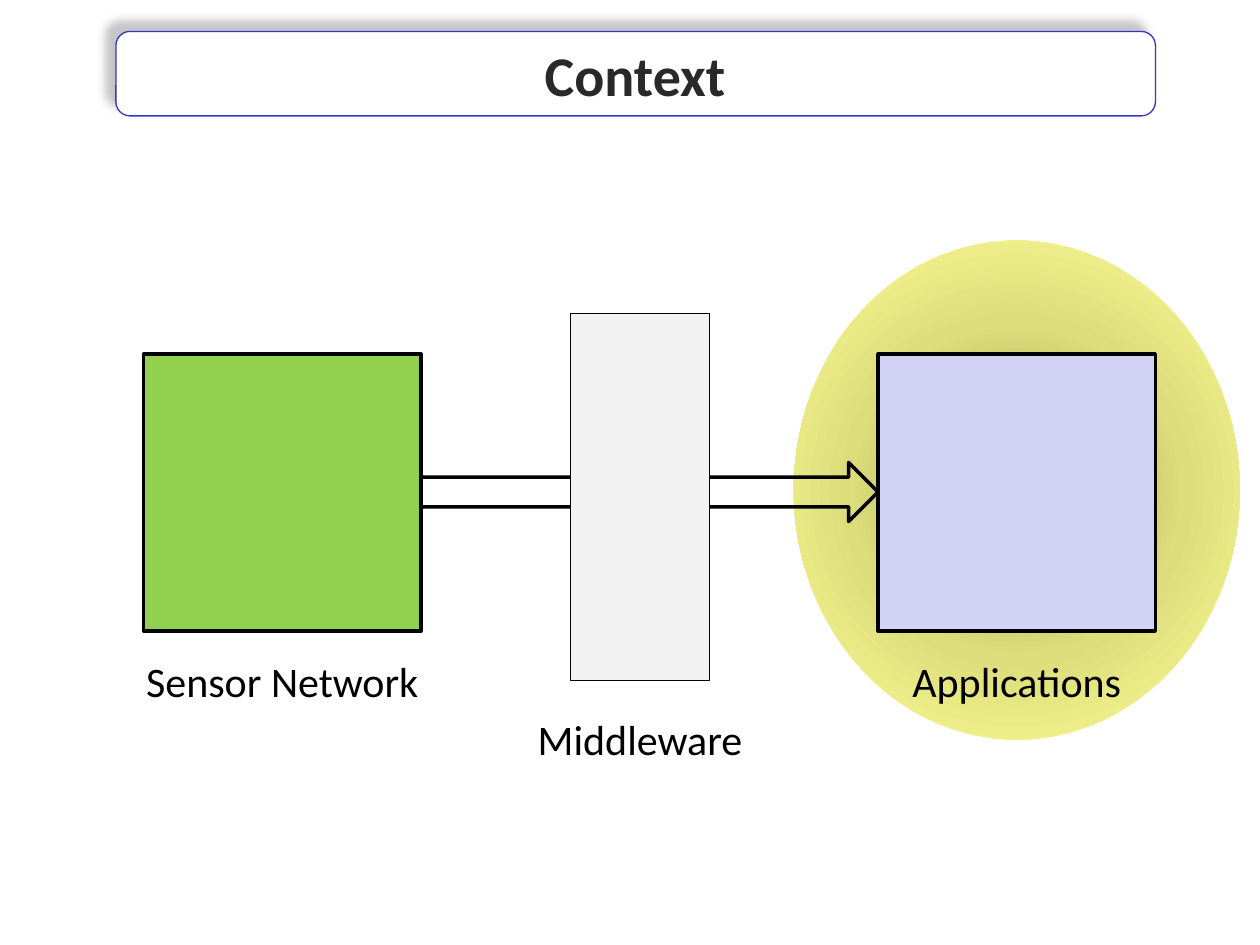
"""Build the context slide: a sensor network feeding applications through middleware."""
import pptx
import pptx.dml.color
import pptx.enum.shapes
import pptx.enum.text
import pptx.oxml
import pptx.oxml.ns
import pptx.util

COLUMNS, ROWS = 100, 75
SLIDE_WIDTH, SLIDE_HEIGHT = pptx.util.Inches(10), pptx.util.Inches(7.5)
FONT = "Calibri"
COLORS = {
    "black": "000000",
    "title": "292929",
    "frame": "3333CC",
    "white": "FFFFFF",
    "shadow": "B2B2B2",
    "sensor": "92D050",
    "middleware": "F2F2F2",
    "application": "D2D2F4",
    "glow center": "9C9C56",
    "glow middle": "DDDD7B",
    "glow edge": "FFFF99",
}
SHAPES = pptx.enum.shapes.MSO_SHAPE


def rgb(name):
    """Return the named colour."""
    return pptx.dml.color.RGBColor.from_string(COLORS[name])


def grid(column, row, columns, rows):
    """Convert grid cells to left, top, width and height."""
    cell_width, cell_height = SLIDE_WIDTH / COLUMNS, SLIDE_HEIGHT / ROWS
    return (round(column * cell_width), round(row * cell_height),
            round(columns * cell_width), round(rows * cell_height))


def add_shape(slide, kind, cells, fill=None, line=None, line_width=2):
    """Add a preset shape without a shadow."""
    shape = slide.shapes.add_shape(kind, *grid(*cells))
    shape.shadow.inherit = False
    if fill:
        shape.fill.solid()
        shape.fill.fore_color.rgb = rgb(fill)
    else:
        shape.fill.background()
    if line:
        shape.line.color.rgb = rgb(line)
        shape.line.width = pptx.util.Pt(line_width)
    else:
        shape.line.fill.background()
    return shape


def format_text(shape, text, size=24, color="black", bold=False):
    """Write one centred paragraph into a shape."""
    paragraph = shape.text_frame.paragraphs[0]
    paragraph.text = text
    paragraph.alignment = pptx.enum.text.PP_ALIGN.CENTER
    paragraph.font.name = FONT
    paragraph.font.size = pptx.util.Pt(size)
    paragraph.font.bold = bold
    paragraph.font.color.rgb = rgb(color)


def add_title(slide, text):
    """Place the title on a rounded frame with a shadow to the upper left."""
    frame = add_shape(slide, SHAPES.ROUNDED_RECTANGLE, (9.2, 2.5, 82.5, 6.7),
                      fill="white", line="frame", line_width=0.75)
    effects = frame._element.spPr.find(pptx.oxml.ns.qn("a:effectLst"))
    effects.append(pptx.oxml.parse_xml(
        f'<a:outerShdw {pptx.oxml.ns.nsdecls("a")} blurRad="{pptx.util.Pt(5)}" '
        f'dist="{pptx.util.Pt(8.5)}" dir="{225 * 60000}" algn="ctr" rotWithShape="0">'
        f'<a:srgbClr val="{COLORS["shadow"]}"><a:alpha val="75000"/></a:srgbClr>'
        '</a:outerShdw>'))
    title = slide.shapes.title
    title.left, title.top, title.width, title.height = grid(10.8, 2.5, 79.2, 6.7)
    title.text_frame.vertical_anchor = pptx.enum.text.MSO_ANCHOR.MIDDLE
    format_text(title, text, size=32, color="title", bold=True)
    frame._element.addnext(title._element)


def add_glow(slide, cells):
    """Add an ellipse with a radial gradient."""
    ellipse = add_shape(slide, SHAPES.OVAL, cells)
    stops = "".join(
        f'<a:gs pos="{position * 1000}"><a:srgbClr val="{COLORS[name]}"/></a:gs>'
        for position, name in ((0, "glow center"), (50, "glow middle"), (100, "glow edge")))
    gradient = pptx.oxml.parse_xml(
        f'<a:gradFill {pptx.oxml.ns.nsdecls("a")} rotWithShape="1"><a:gsLst>{stops}</a:gsLst>'
        '<a:path path="circle"><a:fillToRect l="50000" t="50000" r="50000" b="50000"/>'
        '</a:path></a:gradFill>')
    properties = ellipse._element.spPr
    properties.replace(properties.find(pptx.oxml.ns.qn("a:noFill")), gradient)


def add_stage(slide, text, cells, fill, label_row, label_columns, line_width=2):
    """Add a box with a label centred below it."""
    add_shape(slide, SHAPES.RECTANGLE, cells, fill, "black", line_width)
    label_column = cells[0] + (cells[2] - label_columns) / 2
    label = slide.shapes.add_textbox(*grid(label_column, label_row, label_columns, 5))
    label.text_frame.word_wrap = False
    label.text_frame.auto_size = pptx.enum.text.MSO_AUTO_SIZE.SHAPE_TO_FIT_TEXT
    format_text(label, text)


def main():
    """Build and save the slide."""
    presentation = pptx.Presentation()
    presentation.slide_width, presentation.slide_height = SLIDE_WIDTH, SLIDE_HEIGHT
    slide = presentation.slides.add_slide(presentation.slide_layouts[5])
    add_title(slide, "Context")
    add_glow(slide, (63, 19.1, 35.4, 39.6))
    add_shape(slide, SHAPES.RIGHT_ARROW, (31.9, 36.7, 37.8, 4.7), line="black")
    add_stage(slide, "Sensor Network", (11.4, 28.1, 22, 22), "sensor", 51.5, 23.8)
    add_stage(slide, "Applications", (69.7, 28.1, 22, 22), "application", 51.5, 18.8)
    add_stage(slide, "Middleware", (45.3, 24.9, 11, 29.1), "middleware", 56.1, 18.4,
              line_width=0.75)
    presentation.save("out.pptx")


if __name__ == "__main__":
    main()
